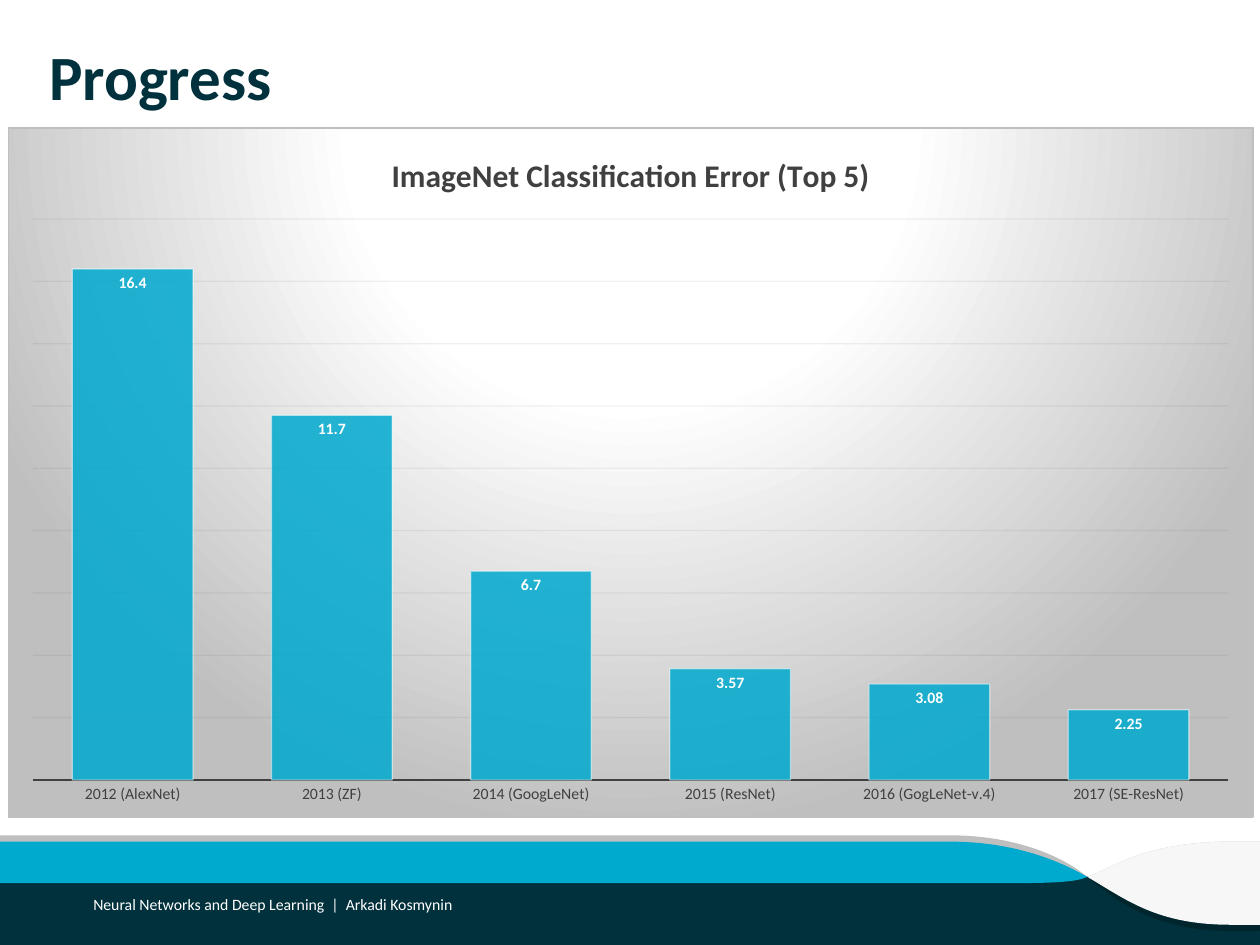
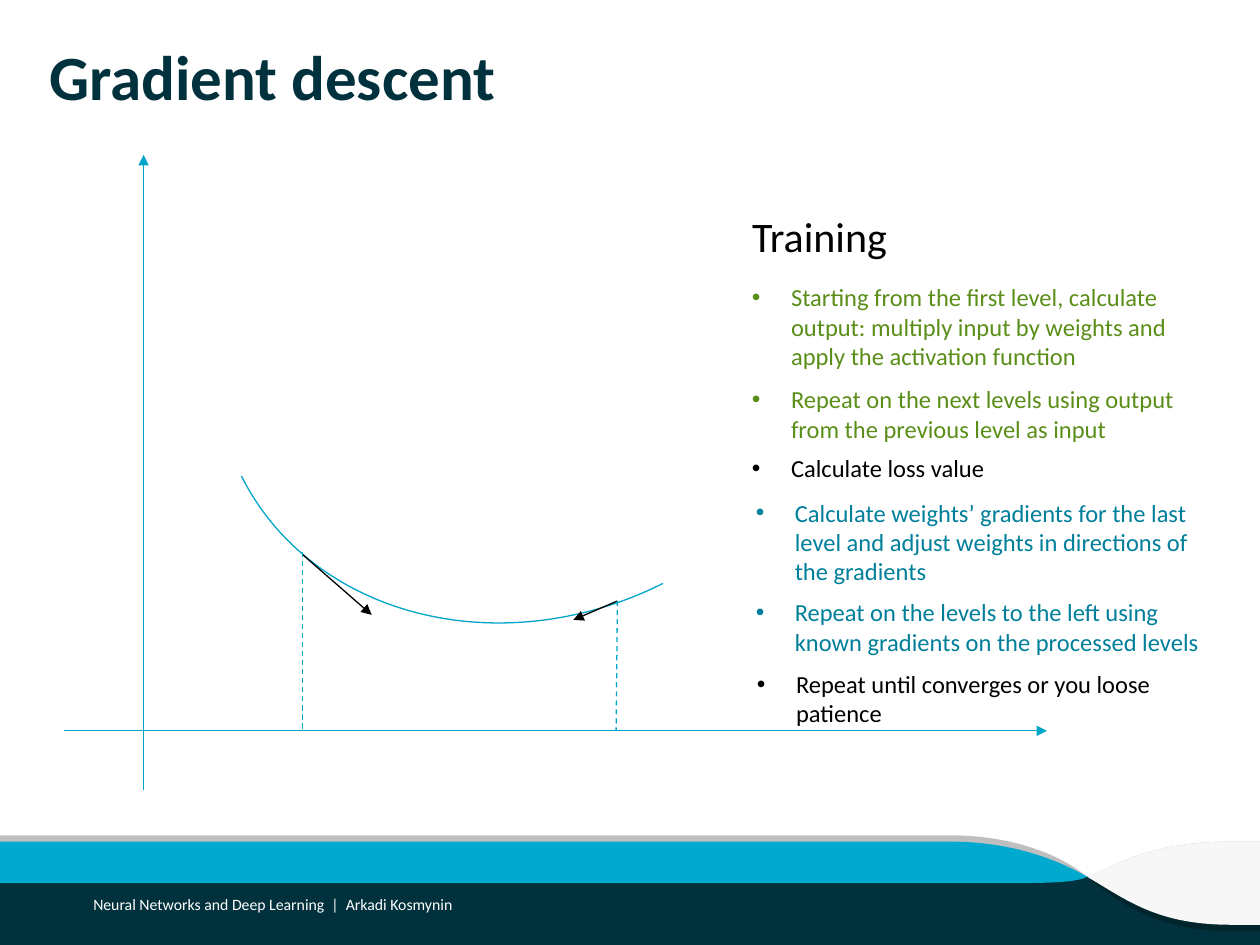
import pptx
import pptx.chart.data
import pptx.dml.color
import pptx.enum.chart
import pptx.enum.dml
import pptx.enum.shapes
import pptx.enum.text
import pptx.oxml
import pptx.oxml.ns
import pptx.util
from pptx.util import Inches

FONT = "Calibri"
NAVY, CYAN, STROKE = "00313C", "00A9CE", "00A5C9"
GREEN, TEAL, BLACK = "5A8E18", "007F9B", "000000"
WHITE, SILVER, CHARCOAL = "FFFFFF", "BFBFBF", "404040"
rgb = pptx.dml.color.RGBColor.from_string
qn = pptx.oxml.ns.qn


def add_text(page, place, text, size, color, bold=False, margin=None, bullet=False):
    box = page.shapes.add_textbox(*[Inches(length) for length in place])
    frame = box.text_frame
    frame.word_wrap = True
    if margin is not None:
        frame.margin_left = frame.margin_right = Inches(margin)
        frame.margin_top = frame.margin_bottom = Inches(margin)
    para = frame.paragraphs[0]
    para.text = text
    if bullet:
        frame.auto_size = pptx.enum.text.MSO_AUTO_SIZE.SHAPE_TO_FIT_TEXT
        props = para._p.get_or_add_pPr()
        props.set("marL", str(Inches(0.31)))
        props.set("indent", str(Inches(-0.31)))
        props.append(props.makeelement(qn("a:buFont"), {"typeface": "Arial"}))
        props.append(props.makeelement(qn("a:buChar"), {"char": "•"}))
    para.font.name = FONT
    para.font.size = pptx.util.Pt(size)
    para.font.bold = bold
    para.font.color.rgb = rgb(color)
    return frame


def set_alpha(element, percent):
    for color in element.iter(qn("a:srgbClr")):
        color.append(color.makeelement(qn("a:alpha"), {"val": str(percent * 1000)}))


deck = pptx.Presentation()
deck.slide_width, deck.slide_height = Inches(10), Inches(7.5)
layout = deck.slide_layouts[6]
progress, descent = pages = [deck.slides.add_slide(layout) for _ in range(2)]

# Footer outlines: pairs are straight steps, sixes are Bezier curves
crossing = (8.63, 6.96)
wing_curve = (9.08, 6.68, 8.83, 6.89, *crossing)
band_end = [(0, 7.01), (7.95, 7.01), (8.4, 7.01, 8.54, 7, *crossing)]
footer_outlines = [
    (SILVER, [
        [(10, 6.68), (9.78, 6.68), wing_curve, (10, 6.96), (10, 7.39)],
        [(7.54, 6.63), (0, 6.63), (0, 6.96), crossing, (8.4, 6.77, 8.01, 6.63, 7.54, 6.63)],
    ]),
    ("00252D", [
        [crossing, (0, 6.96), *band_end],
        [(10, 6.96), crossing, (8.87, 7.16, 9.18, 7.39, 9.77, 7.39), (10, 7.39)],
    ]),
    (CYAN, [[crossing, (8.37, 6.81, 8.01, 6.68, 7.54, 6.68), (0, 6.68), *band_end]]),
    ("F7F7F7", [[(9.78, 6.68), wing_curve, (8.94, 7.14, 9.18, 7.34, 9.77, 7.34),
                 (10, 7.34), (10, 6.68)]]),
]
UNITS = 1000  # outline units per inch

# Footer shapes, placed on the layout that both slides use
base = progress.shapes.add_shape(pptx.enum.shapes.MSO_SHAPE.RECTANGLE,
                                 0, Inches(6.96), Inches(10), Inches(0.54))
footer_shapes = [(base, NAVY)]
for color, contours in footer_outlines:
    builder = None
    curve_starts = []
    count = 0
    for contour in contours:
        points = []
        for step in contour:
            if len(step) == 6:
                curve_starts.append(count + len(points) - 1)
            points += [(step[i] * UNITS, step[i + 1] * UNITS) for i in range(0, len(step), 2)]
        count += len(points) - 1
        if builder is None:
            builder = progress.shapes.build_freeform(*points[0], scale=Inches(1) / UNITS)
        else:
            builder.move_to(*points[0])
        builder.add_line_segments(points[1:], close=True)
    shape = builder.convert_to_shape()
    segments = list(shape._element.iter(qn("a:lnTo")))
    for start in curve_starts:
        bezier = segments[start].makeelement(qn("a:cubicBezTo"), {})
        segments[start].addprevious(bezier)
        for segment in segments[start:start + 3]:
            bezier.append(segment[0])
            segment.getparent().remove(segment)
    footer_shapes.append((shape, color))
for shape, color in footer_shapes:
    shape.shadow.inherit = False
    shape.fill.solid()
    shape.fill.fore_color.rgb = rgb(color)
    shape.line.fill.background()
    layout.shapes._spTree.append(shape._element)

# Titles and footer text
for page, title in zip(pages, ("Progress", "Gradient descent")):
    add_text(page, (0.39, 0.3, 9.25, 0.93), title, 36, NAVY, bold=True, margin=0)
    footer = add_text(page, (0.74, 7.11, 6.65, 0.14),
                      "Neural Networks and Deep Learning  |  Arkadi Kosmynin", 9, WHITE, margin=0)
    footer.vertical_anchor = pptx.enum.text.MSO_ANCHOR.MIDDLE

# Error chart
errors = pptx.chart.data.CategoryChartData()
errors.categories = ["2012 (AlexNet)", "2013 (ZF)", "2014 (GoogLeNet)",
                     "2015 (ResNet)", "2016 (GogLeNet-v.4)", "2017 (SE-ResNet)"]
errors.add_series("Series 1", (16.4, 11.7, 6.7, 3.57, 3.08, 2.25))
chart = progress.shapes.add_chart(
    pptx.enum.chart.XL_CHART_TYPE.COLUMN_CLUSTERED,
    Inches(0.06), Inches(1.01), Inches(9.89), Inches(5.48), errors).chart
chart.has_legend = False
chart.font.name = FONT
chart.font.size = pptx.util.Pt(10)
chart.font.color.rgb = rgb(BLACK)
chart.has_title = True
chart.chart_title.include_in_layout = False
heading = chart.chart_title.text_frame.paragraphs[0]
heading.text = "ImageNet Classification Error (Top 5)"
heading.font.name = FONT
heading.font.size = pptx.util.Pt(18)
heading.font.bold = True
heading.font.color.rgb = rgb(CHARCOAL)

# Axes
years = chart.category_axis
years.major_tick_mark = pptx.enum.chart.XL_TICK_MARK.NONE
years.tick_labels.font.name = FONT
years.tick_labels.font.size = pptx.util.Pt(9)
years.tick_labels.font.color.rgb = rgb(CHARCOAL)
years.format.line.color.rgb = rgb(CHARCOAL)
years.format.line.width = pptx.util.Pt(1.5)
scale = chart.value_axis
scale.visible = False
scale.minimum_scale, scale.maximum_scale, scale.major_unit = 0, 18, 2
grid = scale.major_gridlines.format.line
grid.color.rgb = rgb("0D0D0D")
grid.width = pptx.util.Pt(0.75)
set_alpha(scale._element.find(qn("c:majorGridlines")), 6)

# Columns and their labels
plot = chart.plots[0]
plot.gap_width = 65
plot.vary_by_categories = False
columns = plot.series[0]
columns.format.fill.solid()
columns.format.fill.fore_color.rgb = rgb(CYAN)
set_alpha(columns._element.find(qn("c:spPr")), 85)
columns.format.line.color.rgb = rgb(WHITE)
columns.format.line.width = pptx.util.Pt(0.75)
set_alpha(columns._element.find(qn("c:spPr")).find(qn("a:ln")), 50)
labels = columns.data_labels
labels.show_value = True
labels.position = pptx.enum.chart.XL_LABEL_POSITION.INSIDE_END
labels.font.name = FONT
labels.font.size = pptx.util.Pt(9)
labels.font.bold = True
labels.font.color.rgb = rgb(WHITE)

# Gradient backdrop of the chart
stops = "".join(f'<a:gs pos="{position * 1000}"><a:srgbClr val="{color}"/></a:gs>'
                for position, color in ((0, WHITE), (39, WHITE), (100, SILVER)))
chart._chartSpace.chart.addnext(pptx.oxml.parse_xml(
    f'<c:spPr {pptx.oxml.ns.nsdecls("c", "a")}><a:gradFill><a:gsLst>{stops}</a:gsLst>'
    '<a:path path="circle"><a:fillToRect l="50000" t="-80000" r="50000" b="180000"/></a:path>'
    f'</a:gradFill><a:ln w="9525"><a:solidFill><a:srgbClr val="{SILVER}"/></a:solidFill></a:ln>'
    '</c:spPr>'))

# Axes, loss curve, then each gradient arrow grouped with its dashed drop
axis_lines = [(1.14, 6.27, 1.14, 1.23, STROKE, True), (0.51, 5.8, 8.31, 5.8, STROKE, True)]
left_step = [(2.4, 4.4, 2.95, 4.88, BLACK, True), (2.4, 4.38, 2.4, 5.8, STROKE, False)]
right_step = [(4.9, 4.77, 4.55, 4.92, BLACK, True), (4.9, 4.77, 4.89, 5.8, STROKE, False)]
for lines in (axis_lines, left_step, right_step):
    if lines is axis_lines:
        holder = descent
    else:
        holder = descent.shapes.add_group_shape()
    for start_x, start_y, end_x, end_y, color, is_arrow in lines:
        line = holder.shapes.add_connector(
            pptx.enum.shapes.MSO_CONNECTOR.STRAIGHT,
            Inches(start_x), Inches(start_y), Inches(end_x), Inches(end_y))
        line.line.color.rgb = rgb(color)
        line.line.width = pptx.util.Pt(0.75)
        outline = line.line._get_or_add_ln()
        if is_arrow:
            outline.append(outline.makeelement(qn("a:tailEnd"), {"type": "triangle"}))
        else:
            line.line.dash_style = pptx.enum.dml.MSO_LINE.DASH
        properties = line._element.spPr
        properties.append(properties.makeelement(qn("a:effectLst"), {}))
    if lines is axis_lines:
        curve = descent.shapes.add_shape(pptx.enum.shapes.MSO_SHAPE.ARC,
                                         Inches(1.64), Inches(0.35), Inches(5.22), Inches(4.52))
        curve.rotation = 153.4
        curve.shadow.inherit = False
        curve.fill.background()
        curve.line.color.rgb = rgb(STROKE)
        curve.line.width = pptx.util.Pt(0.75)

# Training steps
training = add_text(descent, (5.87, 1.62, 1.28, 0.5), "Training", 24, BLACK)
training.word_wrap = False
training.auto_size = pptx.enum.text.MSO_AUTO_SIZE.SHAPE_TO_FIT_TEXT
for left, top, height, color, step in (
        (5.87, 2.19, 0.81, GREEN, "Starting from the first level, calculate output: "
         "multiply input by weights and apply the activation function"),
        (5.87, 3, 0.57, GREEN, "Repeat on the next levels using output "
         "from the previous level as input"),
        (5.87, 3.55, 0.34, BLACK, "Calculate loss value"),
        (5.9, 3.9, 0.81, TEAL, "Calculate weights’ gradients for the last level "
         "and adjust weights in directions of the gradients"),
        (5.9, 4.69, 0.57, TEAL, "Repeat on the levels to the left using "
         "known gradients on the processed levels"),
        (5.91, 5.26, 0.57, BLACK, "Repeat until converges or you loose patience")):
    add_text(descent, (left, top, 3.86, height), step, 14, color, bullet=True)

deck.save("out.pptx")
